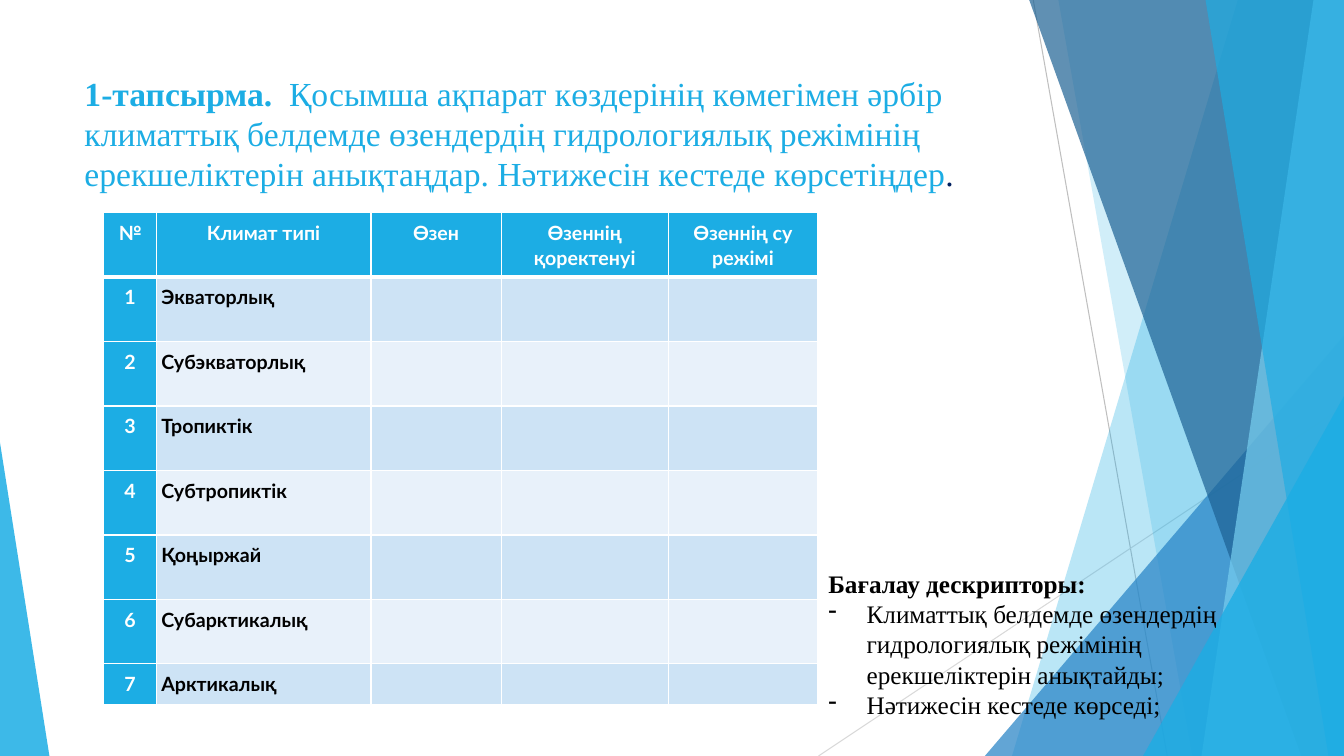
from dataclasses import dataclass

import lxml.etree
import pptx
import pptx.dml.color
import pptx.enum.shapes
import pptx.enum.text
import pptx.oxml
import pptx.oxml.ns
import pptx.util

RGB = pptx.dml.color.RGBColor
ALIGN = pptx.enum.text.PP_ALIGN
qn = pptx.oxml.ns.qn

SKY = RGB(0x1C, 0xAD, 0xE4)
BLUE = RGB(0x26, 0x83, 0xC6)
DEEP = RGB(0x1D, 0x62, 0x94)
PALE = RGB(0x77, 0xCE, 0xEF)
NAVY = RGB(0x00, 0x20, 0x60)
BAND = RGB(0xCD, 0xE3, 0xF5)
LIGHT = RGB(0xE8, 0xF1, 0xFA)
WHITE = RGB(0xFF, 0xFF, 0xFF)
BLACK = RGB(0, 0, 0)
GREY = RGB(0xBF, 0xBF, 0xBF)
MIST = RGB(0xD9, 0xD9, 0xD9)
SERIF, SANS = "Times New Roman", "Lato"


@dataclass
class Ray:
    """Thin line between two points, in percent of the slide."""
    start: tuple[float, float]
    end: tuple[float, float]
    color: RGB


@dataclass
class Facet:
    """Full-height band from a slanted left edge to the right side."""
    top: float
    foot: float
    color: RGB
    alpha: int


@dataclass
class Wedge:
    """Triangle standing on the bottom edge; tip is 0 (left) or 1 (right)."""
    left: float
    top: float
    width: float
    tip: int
    color: RGB
    alpha: int


@dataclass
class Span:
    """Piece of text in one style."""
    text: str
    bold: bool
    color: RGB


RAYS = [Ray((76.88, 0), (86.85, 100), GREY), Ray((100, 53.73), (60.9, 100), MIST)]
PARTS = [
    Facet(92.1, 75.3, SKY, 30),
    Facet(78.75, 88.73, SKY, 20),
    Wedge(73.28, 44.4, 26.72, 1, BLUE, 72),
    Facet(76.58, 96.83, DEEP, 70),
    Facet(97.73, 89.4, PALE, 70),
    Facet(89.7, 98.85, SKY, 65),
    Wedge(85.05, 52.4, 14.95, 1, SKY, 80),
    Wedge(0, 58.53, 3.68, 0, SKY, 85),
]
TITLE = [
    Span("1-тапсырма.  ", True, SKY),
    Span("Қосымша ақпарат көздерінің көмегімен әрбір климаттық белдемде "
         "өзендердің гидрологиялық режімінің ерекшеліктерін анықтаңдар. "
         "Нәтижесін кестеде көрсетіңдер", False, SKY),
    Span(".", False, NAVY),
]
HEADS = ["№", "Климат типі", "Өзен", "Өзеннің қоректенуі", "Өзеннің су режімі"]
ZONES = ["Экваторлық", "Субэкваторлық", "Тропиктік", "Субтропиктік",
         "Қоңыржай", "Субарктикалық", "Арктикалық"]
COLS = [3.9, 15.98, 9.68, 12.45, 11.1]
ROWS = [8.53] * len(ZONES) + [5.33]
GOALS = ["Климаттық белдемде өзендердің гидрологиялық режімінің ерекшеліктерін анықтайды;",
         "Нәтижесін кестеде көрседі;"]

deck = pptx.Presentation()
deck.slide_width = pptx.util.Inches(13.333)
deck.slide_height = pptx.util.Inches(7.5)
slide = deck.slides.add_slide(deck.slide_layouts[6])


def across(share: float) -> int:
    return round(deck.slide_width * share / 100)


def down(share: float) -> int:
    return round(deck.slide_height * share / 100)


def paint(shape, color: RGB, alpha: int) -> None:
    shape.shadow.inherit = False
    shape.line.fill.background()
    shape.fill.solid()
    shape.fill.fore_color.rgb = color
    tint = shape.fill._xPr.find(qn("a:solidFill"))[0]
    lxml.etree.SubElement(tint, qn("a:alpha")).set("val", str(alpha * 1000))


def style(run, face: str, size: int, bold: bool, color: RGB) -> None:
    run.font.name, run.font.size = face, pptx.util.Pt(size)
    run.font.bold, run.font.color.rgb = bold, color


def draw_ray(ray: Ray) -> None:
    line = slide.shapes.add_connector(
        pptx.enum.shapes.MSO_CONNECTOR.STRAIGHT, across(ray.start[0]), down(ray.start[1]),
        across(ray.end[0]), down(ray.end[1]))
    line.line.color.rgb, line.line.width = ray.color, pptx.util.Pt(0.75)
    lxml.etree.SubElement(line._element.spPr, qn("a:effectLst"))


def draw_facet(facet: Facet) -> None:
    path = slide.shapes.build_freeform(across(facet.top), 0)
    path.add_line_segments([(across(100), 0), (across(100), down(100)),
                            (across(facet.foot), down(100))], close=True)
    paint(path.convert_to_shape(), facet.color, facet.alpha)


def draw_wedge(wedge: Wedge) -> None:
    shape = slide.shapes.add_shape(
        pptx.enum.shapes.MSO_SHAPE.ISOSCELES_TRIANGLE, across(wedge.left), down(wedge.top),
        across(wedge.width), down(100 - wedge.top))
    shape.adjustments[0] = wedge.tip
    paint(shape, wedge.color, wedge.alpha)


def add_box(left: float, top: float, width: float, height: float):
    frame = slide.shapes.add_textbox(
        across(left), down(top), across(width), down(height)).text_frame
    frame.word_wrap = True
    return frame


def edge(cell, foot: int) -> None:
    props = cell._tc.get_or_add_tcPr()
    for spot, (side, width) in enumerate([("L", 1), ("R", 1), ("T", 1), ("B", foot)]):
        props.insert(spot, pptx.oxml.parse_xml(
            f'<a:ln{side} xmlns:a="http://schemas.openxmlformats.org/drawingml/2006/main" '
            f'w="{pptx.util.Pt(width)}"><a:solidFill><a:srgbClr val="{WHITE}"/>'
            f'</a:solidFill></a:ln{side}>'))


def fill_cell(cell, text: str, row: int, col: int) -> None:
    strong = row == 0 or col == 0
    cell.fill.solid()
    cell.fill.fore_color.rgb = SKY if strong else BAND if row % 2 else LIGHT
    edge(cell, 3 if row == 0 else 1)
    if not text:
        return
    cell.margin_left = cell.margin_right = pptx.util.Inches(0.05)
    cell.margin_top = cell.margin_bottom = pptx.util.Inches(0.07)
    cell.text_frame.text = text
    para = cell.text_frame.paragraphs[0]
    para.alignment = ALIGN.CENTER if strong else ALIGN.LEFT
    para.line_spacing = 1.06
    style(para.runs[0], SANS, 14, True, WHITE if strong else BLACK)


# Backdrop
for ray in RAYS:
    draw_ray(ray)
for part in PARTS:
    if isinstance(part, Facet):
        draw_facet(part)
    else:
        draw_wedge(part)

# Title
para = add_box(5.55, 8.93, 74.18, 19.2).paragraphs[0]
for span in TITLE:
    run = para.add_run()
    run.text = span.text
    style(run, SERIF, 24, span.bold, span.color)

# Climate table
grid = slide.shapes.add_table(len(ROWS), len(COLS), across(7.73), down(28.13),
                              across(sum(COLS)), down(sum(ROWS))).table
for col, share in enumerate(COLS):
    grid.columns[col].width = across(share)
for row, share in enumerate(ROWS):
    grid.rows[row].height = down(share)
lines = [HEADS] + [[str(num), zone, "", "", ""] for num, zone in enumerate(ZONES, 1)]
for row, line in enumerate(lines):
    for col, text in enumerate(line):
        fill_cell(grid.cell(row, col), text, row, col)

# Marking guide
frame = add_box(60.9, 74.27, 33.75, 25.73)
frame.text = "\n".join(["Бағалау дескрипторы:"] + GOALS)
head, *goals = frame.paragraphs
head.alignment, head.line_spacing = ALIGN.JUSTIFY, 1.06
style(head.runs[0], SERIF, 18, True, BLACK)
for goal in goals:
    style(goal.runs[0], SERIF, 18, False, BLACK)
    props = goal._p.get_or_add_pPr()
    indent = pptx.util.Inches(0.38)
    props.set("marL", str(indent))
    props.set("indent", str(-indent))
    lxml.etree.SubElement(props, qn("a:buChar")).set("char", "-")

deck.save("out.pptx")
